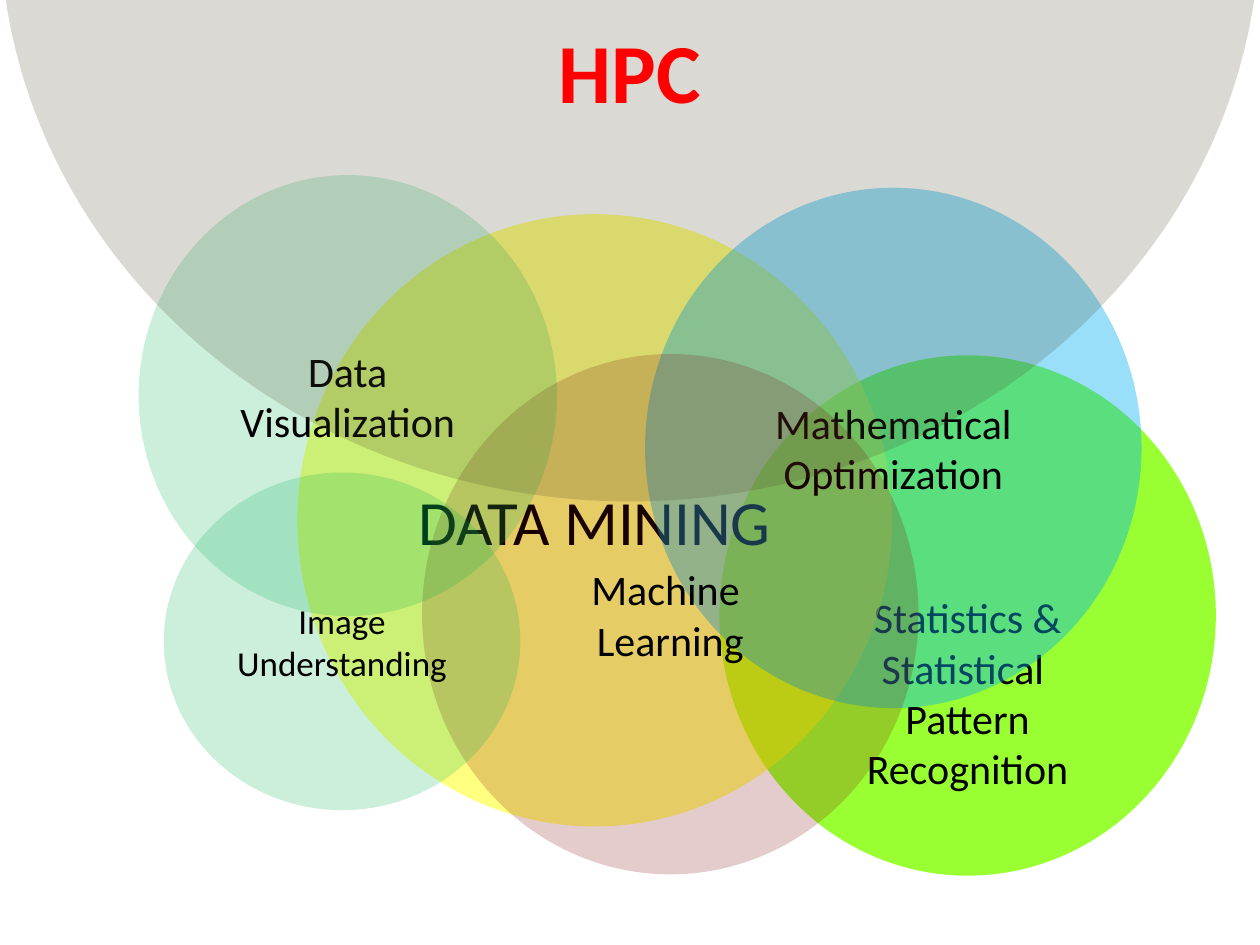
"""Draw overlapping circles of the fields around data mining."""
from dataclasses import dataclass

import lxml.etree
import pptx
import pptx.dml.color
import pptx.enum.shapes
import pptx.enum.text
import pptx.oxml.ns
import pptx.slide
import pptx.util

Inches = pptx.util.Inches
Anchor = pptx.enum.text.MSO_ANCHOR
COLORS = {
    "lime": "99FF33",
    "yellow": "FFFF00",
    "blue": "00B0F0",
    "maroon": "800000",
    "green": "00B050",
    "olive": "4A452A",
    "black": "000000",
    "red": "FF0000",
}


@dataclass
class Field:
    lines: tuple[str, ...]
    left: float
    top: float
    width: float
    height: float
    fill: str
    alpha: int = 100
    size: int = 24
    ink: str = "black"
    bold: bool = False
    anchor: Anchor = Anchor.MIDDLE
    inset: float = 0.05


FIELDS = (
    Field(("Statistics & Statistical ", "Pattern Recognition"),
          5.71, 2.82, 3.94, 4.13, "lime", anchor=Anchor.BOTTOM),
    Field(("DATA MINING",), 2.36, 1.7, 4.72, 4.86, "yellow", 50, 36),
    Field(("Mathematical Optimization",), 5.12, 1.49, 3.94, 4.13, "blue", 40),
    Field(("Machine ", "Learning"), 3.35, 2.81, 3.94, 4.13, "maroon", 20),
    Field(("Image Understanding",), 1.3, 3.75, 2.83, 2.68, "green", 20, 20),
    Field(("Data Visualization",), 1.1, 1.39, 3.32, 3.5, "green", 20),
    Field(("HPC",), 0, -5.23, 10, 9.21, "olive", 20, 48, "red", True,
          Anchor.BOTTOM, 1.68),
)


def color(name: str) -> pptx.dml.color.RGBColor:
    """Look up a named colour."""
    return pptx.dml.color.RGBColor.from_string(COLORS[name])


def draw_field(slide: pptx.slide.Slide, field: Field) -> None:
    """Draw one see-through circle with its label."""
    box = map(Inches, (field.left, field.top, field.width, field.height))
    shape = slide.shapes.add_shape(pptx.enum.shapes.MSO_SHAPE.OVAL, *box)
    shape.shadow.inherit = False
    shape.line.fill.background()
    shape.fill.solid()
    shape.fill.fore_color.rgb = color(field.fill)
    if field.alpha < 100:
        qn = pptx.oxml.ns.qn
        tint = shape.element.spPr.find(qn("a:solidFill"))[0]
        lxml.etree.SubElement(tint, qn("a:alpha"), val=str(field.alpha * 1000))
    frame = shape.text_frame
    frame.word_wrap = True
    frame.vertical_anchor = field.anchor
    frame.margin_bottom = Inches(field.inset)
    frame.text = "\n".join(field.lines)
    for para in frame.paragraphs:
        para.alignment = pptx.enum.text.PP_ALIGN.CENTER
        para.font.name = "Calibri"
        para.font.size = pptx.util.Pt(field.size)
        para.font.bold = field.bold
        para.font.color.rgb = color(field.ink)


def main() -> None:
    """Build and save the slide."""
    deck = pptx.Presentation()
    deck.slide_width, deck.slide_height = Inches(10), Inches(7.5)
    slide = deck.slides.add_slide(deck.slide_layouts[6])
    for field in FIELDS:
        draw_field(slide, field)
    deck.save("out.pptx")


if __name__ == "__main__":
    main()
